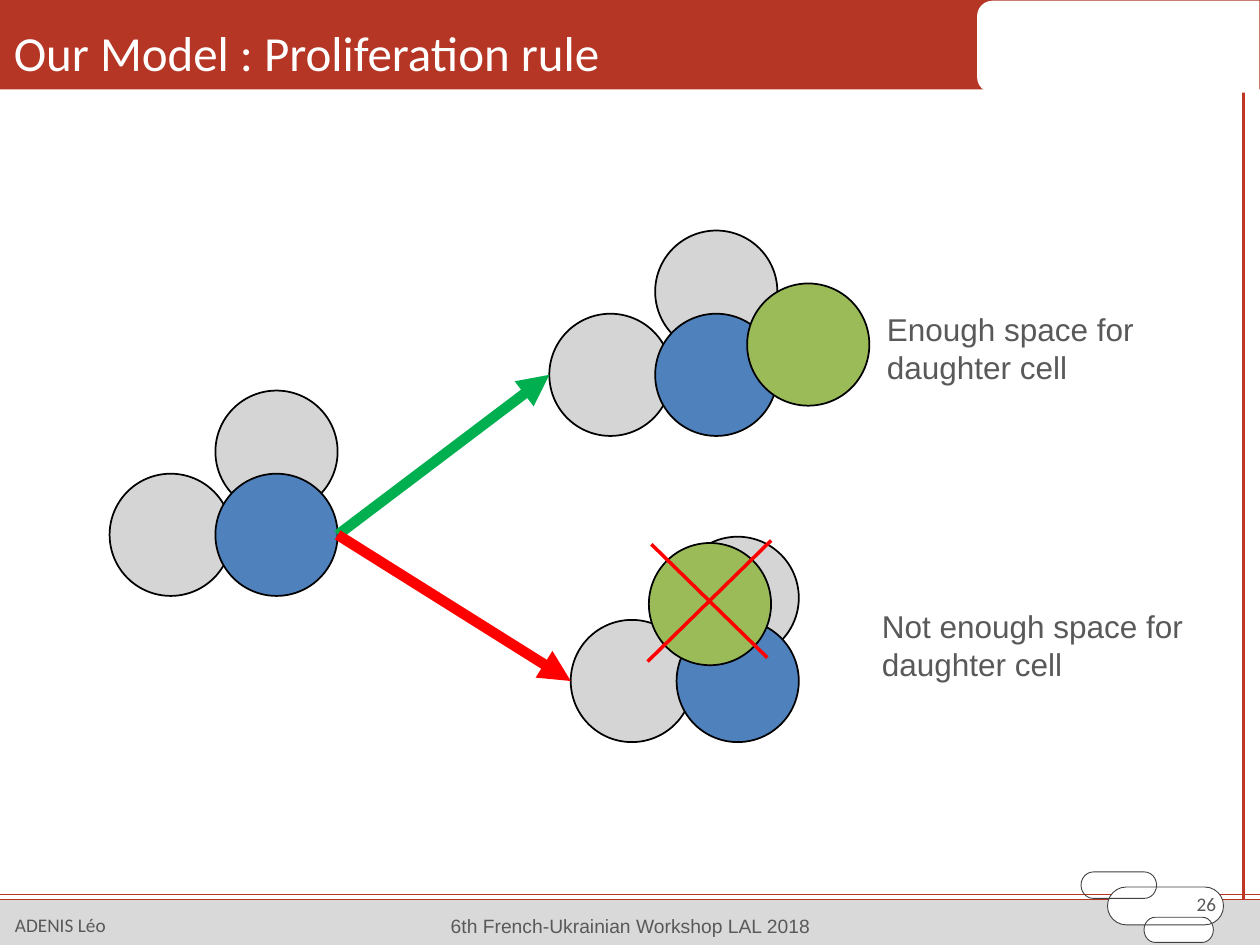
from lxml import etree
from pptx import Presentation
from pptx.dml.color import RGBColor
from pptx.enum.shapes import MSO_CONNECTOR, MSO_SHAPE
from pptx.enum.text import MSO_ANCHOR, PP_ALIGN
from pptx.oxml.ns import qn
from pptx.util import Inches, Pt

STRAIGHT = MSO_CONNECTOR.STRAIGHT
RECT, CIRCLE, PILL = MSO_SHAPE.RECTANGLE, MSO_SHAPE.OVAL, MSO_SHAPE.FLOWCHART_TERMINATOR
TAB = MSO_SHAPE.ROUND_2_SAME_RECTANGLE
LEFT, CENTER, RIGHT = PP_ALIGN.LEFT, PP_ALIGN.CENTER, PP_ALIGN.RIGHT
TOP, MIDDLE = MSO_ANCHOR.TOP, MSO_ANCHOR.MIDDLE

COLORS = {
    "brand": "B53625", "rail": "C03625", "footer": "D9D9D9", "white": "FFFFFF",
    "outline": "404040", "text": "595959", "black": "000000",
    "neighbour": "D6D5D5", "mother": "4F81BD", "daughter": "9BBB59",
    "allowed": "00B050", "blocked": "FF0000",
}
WIDTH, HEIGHT = 10, 7.5
CELL = 0.97            # cell diameter
STEP_X, STEP_Y = 0.84, 0.66   # offsets between neighbouring cells


def color(name):
    return RGBColor.from_string(COLORS[name])


def add_figure(shapes, kind, box, fill=None, line=None, weight=1):
    figure = shapes.add_shape(kind, *map(Inches, box))
    figure.shadow.inherit = False
    if fill:
        figure.fill.solid()
        figure.fill.fore_color.rgb = color(fill)
    else:
        figure.fill.background()
    if line:
        figure.line.color.rgb = color(line)
        figure.line.width = Pt(weight)
    else:
        figure.line.fill.background()
    return figure


def add_line(shapes, start, end, line, weight, arrow=False):
    connector = shapes.add_connector(STRAIGHT, *map(Inches, (*start, *end)))
    connector.line.color.rgb = color(line)
    connector.line.width = Pt(weight)
    if arrow:
        etree.SubElement(connector.line._get_or_add_ln(), qn("a:tailEnd"), type="triangle")
    etree.SubElement(connector._element.spPr, qn("a:effectLst"))


def write(holder, text, size, font="Arial", ink="text", align=LEFT, anchor=TOP, wrap=True):
    frame = holder.text_frame
    frame.word_wrap = wrap
    frame.vertical_anchor = anchor
    frame.text = text
    paragraph = frame.paragraphs[0]
    paragraph.alignment = align
    paragraph.font.size = Pt(size)
    paragraph.font.name = font
    paragraph.font.color.rgb = color(ink)


def add_text(shapes, box, text, size, **style):
    write(shapes.add_textbox(*map(Inches, box)), text, size, **style)


def add_header(slide, height, title):
    shapes = slide.shapes
    add_line(shapes, (9.87, 0), (9.87, HEIGHT), "rail", 2)
    add_figure(shapes, RECT, (0, 0, WIDTH, height), "brand")
    logo_tab = add_figure(shapes, TAB, (8.51, -0.75, 0.73, 2.24), "white")
    logo_tab.rotation = 270
    heading = shapes.title
    heading.left, heading.top, heading.width, heading.height = map(
        Inches, (0.01, 0.06, 7.63, height))
    write(heading, title, 28, "Calibri", "white", anchor=MIDDLE)
    shapes._spTree.append(heading._element)  # bring in front of the band


def add_footer(shapes, top, author, event, number):
    add_figure(shapes, RECT, (0, top, WIDTH, HEIGHT - top), "footer")
    for y in (top - 0.04, top):
        add_line(shapes, (0, y), (WIDTH, y), "brand", 1)
    lower_pill = (9.08, top + 0.14, 0.55, 0.2)
    add_figure(shapes, PILL, lower_pill, "white")
    add_figure(shapes, PILL, (8.79, top - 0.1, 0.92, 0.3), "white", "outline", 0.5)
    for box in ((8.58, top - 0.22, 0.6, 0.21), lower_pill):
        add_figure(shapes, PILL, box, None, "outline", 0.5)
    add_text(shapes, (0.02, top + 0.06, 0.93, 0.29), author, 11, font="Calibri", wrap=False)
    add_text(shapes, (3.22, top + 0.07, 3.57, 0.29), event, 11, align=CENTER)
    add_text(shapes, (7.42, top - 0.17, 2.33, 0.4), number, 11,
             font="Calibri", align=RIGHT, anchor=MIDDLE)


def add_cluster(slide, left, top, daughter=None, crossed=False):
    """Group two neighbours, the mother and optionally a daughter at an offset."""
    cells = slide.shapes.add_group_shape().shapes
    layout = [("neighbour", STEP_X, 0), ("neighbour", 0, STEP_Y), ("mother", STEP_X, STEP_Y)]
    if daughter:
        layout.append(("daughter", *daughter))
    for role, dx, dy in layout:
        add_figure(cells, CIRCLE, (left + dx, top + dy, CELL, CELL), role, "black")
    if crossed:
        x, y = left + daughter[0], top + daughter[1]
        add_line(cells, (x - 0.01, y + 0.94), (x + CELL, y - 0.02), "blocked", 2)
        add_line(cells, (x + 0.02, y + 0.01), (x + 0.94, y + 0.91), "blocked", 2)


def add_outcome(slide, start, cluster, daughter, arrow_color, label_at, label, crossed=False):
    left, top = cluster
    add_cluster(slide, left, top, daughter, crossed)
    add_line(slide.shapes, start, (left, top + STEP_Y + CELL / 2), arrow_color, 6, arrow=True)
    caption = add_figure(slide.shapes, RECT, (*label_at, 2.85, 0.71), "white")
    write(caption, label, 18)


def add_proliferation(slide, left, top):
    add_cluster(slide, left, top)
    start = (left + STEP_X + CELL, top + STEP_Y + CELL / 2)
    add_outcome(slide, start, (4.36, 1.83), (1.57, 0.42), "allowed",
                (6.94, 2.41), "Enough space for daughter cell")
    add_outcome(slide, start, (4.53, 4.26), (0.62, 0.05), "blocked",
                (6.9, 4.77), "Not enough space for daughter cell", crossed=True)


def main():
    deck = Presentation()
    deck.slide_width, deck.slide_height = Inches(WIDTH), Inches(HEIGHT)
    slide = deck.slides.add_slide(deck.slide_layouts.get_by_name("Title Only"))
    add_header(slide, 0.71, "Our Model : Proliferation rule")
    add_footer(slide.shapes, 7.14, "ADENIS Léo", "6th French-Ukrainian Workshop LAL 2018", "26")
    add_proliferation(slide, 0.87, 3.1)
    deck.save("out.pptx")


if __name__ == "__main__":
    main()
